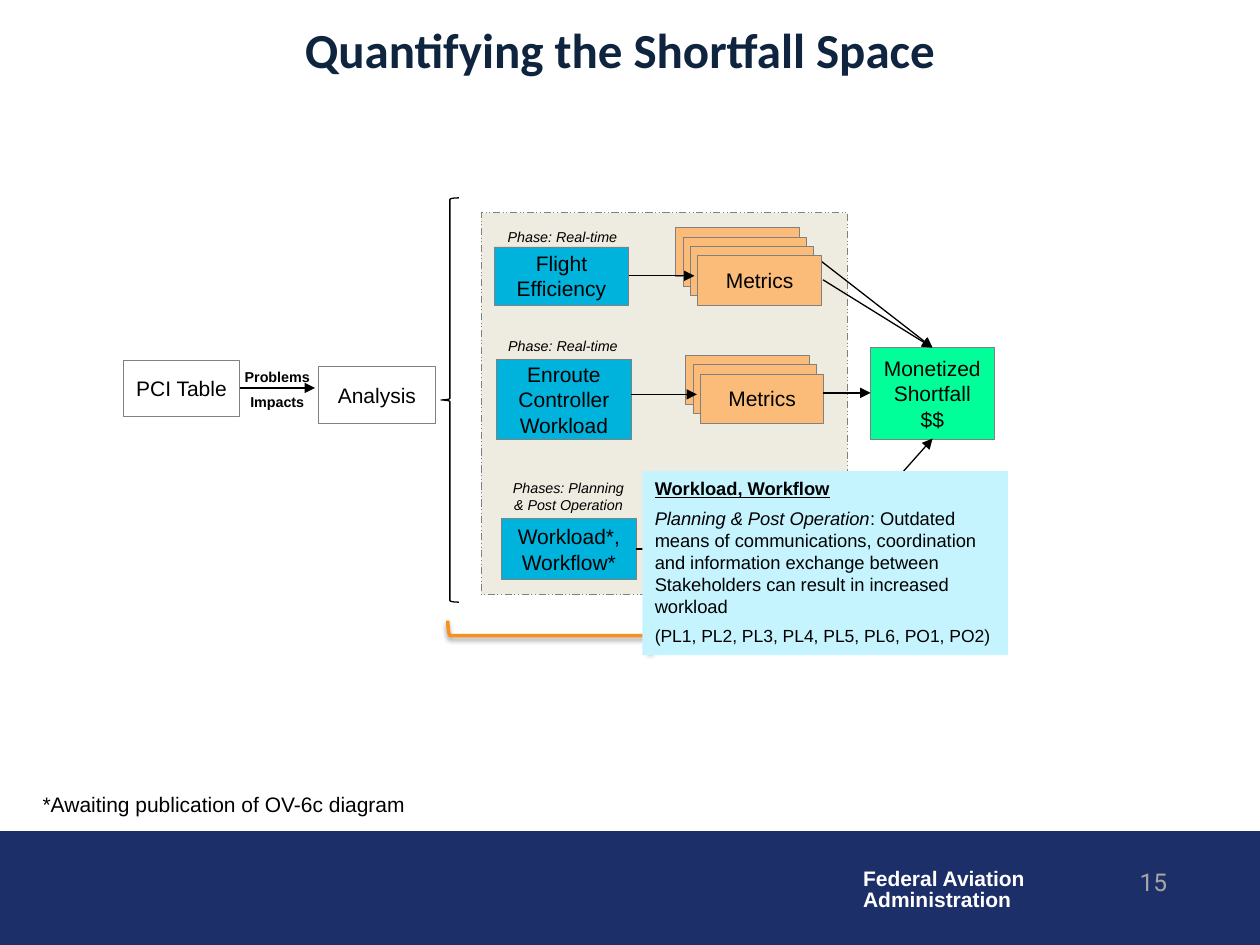
from dataclasses import dataclass, field
from typing import NamedTuple, Optional

from lxml.etree import SubElement
from pptx import Presentation
from pptx.dml.color import RGBColor
from pptx.enum.dml import MSO_LINE
from pptx.enum.shapes import MSO_CONNECTOR, MSO_SHAPE
from pptx.enum.text import MSO_ANCHOR, PP_ALIGN
from pptx.oxml.ns import qn
from pptx.util import Cm, Pt


@dataclass(frozen=True)
class Theme:
    navy: str = "1D2F68"
    title: str = "0F243E"
    black: str = "000000"
    white: str = "FFFFFF"
    number: str = "A6A6A6"
    outline: str = "808080"
    panel: str = "EEECE1"
    card: str = "FABC78"
    task: str = "00B3DC"
    result: str = "00FF99"
    note: str = "C5F4FF"
    accent: str = "F7901E"
    title_size: float = 28
    number_size: float = 14
    body_size: float = 12
    note_size: float = 10.5
    codes_size: float = 10
    label_size: float = 8.2


THEME = Theme()


class Area(NamedTuple):
    left: float
    top: float
    width: float
    height: float


class Run(NamedTuple):
    text: str
    style: dict = {}


@dataclass
class TextStyle:
    size: float = THEME.body_size
    color: str = THEME.black
    font: str = "Arial"
    align: PP_ALIGN = PP_ALIGN.CENTER
    font_values: dict = field(default_factory=dict)
    paragraph_values: dict = field(default_factory=dict)
    frame_values: dict = field(default_factory=dict)


class Box(NamedTuple):
    area: Area
    text: list
    fill: Optional[str]


def set_values(target, values: dict) -> None:
    for name, value in values.items():
        setattr(target, name, value)


def write(shape, paragraphs: list, style: TextStyle) -> None:
    """Fill a shape with text; each paragraph is a string or a list of runs."""
    frame = shape.text_frame
    set_values(frame, {"word_wrap": True, **style.frame_values})
    for index, content in enumerate(paragraphs):
        paragraph = frame.add_paragraph() if index else frame.paragraphs[0]
        set_values(paragraph, {"alignment": style.align, **style.paragraph_values})
        for part in [Run(content)] if isinstance(content, str) else content:
            run = paragraph.add_run()
            run.text = part.text
            set_values(run.font, {"name": style.font, "size": Pt(style.size),
                                  **style.font_values, **part.style})
            run.font.color.rgb = RGBColor.from_string(style.color)


def add_shape(slide, kind: MSO_SHAPE, area: Area, fill: Optional[str] = None,
              line: Optional[str] = THEME.outline, width: float = 0.5):
    shape = slide.shapes.add_shape(kind, *map(Cm, area))
    shape.shadow.inherit = False
    for paint, color in ((shape.fill, fill), (shape.line.fill, line)):
        if color:
            paint.solid()
            paint.fore_color.rgb = RGBColor.from_string(color)
        else:
            paint.background()
    if line:
        shape.line.width = Pt(width)
    return shape


def add_text(slide, area: Area, paragraphs: list, style: TextStyle) -> None:
    write(slide.shapes.add_textbox(*map(Cm, area)), paragraphs, style)


def add_box(slide, box: Box) -> None:
    write(add_shape(slide, MSO_SHAPE.RECTANGLE, box.area, box.fill), box.text, BOX_STYLE)


def add_stack(slide, left: float, top: float, count: int) -> None:
    """Draw overlapping cards; left and top belong to the front card."""
    for behind in reversed(range(count)):
        area = Area(left - 0.15 * behind, top - 0.19 * behind, 2.49, 0.99)
        add_box(slide, Box(area, [] if behind else ["Metrics"], THEME.card))


def add_arrow(slide, *ends: float) -> None:
    connector = slide.shapes.add_connector(MSO_CONNECTOR.STRAIGHT, *map(Cm, ends))
    connector.line.color.rgb = RGBColor.from_string(THEME.black)
    connector.line.width = Pt(0.75)
    properties = connector._element.spPr
    SubElement(properties.find(qn("a:ln")), qn("a:tailEnd"), type="triangle")
    SubElement(properties, qn("a:effectLst"))


def add_soft_shadow(shape) -> None:
    shadow = SubElement(shape._element.spPr.find(qn("a:effectLst")), qn("a:outerShdw"),
                        blurRad=str(Pt(3.1)), dist=str(Pt(1.6)), dir="5400000")
    color = SubElement(shadow, qn("a:srgbClr"), val=THEME.black)
    SubElement(color, qn("a:alpha"), val="38000")


# Text styles
MIDDLE = {"vertical_anchor": MSO_ANCHOR.MIDDLE}
SPACED = {"space_after": Pt(4.5)}
BOX_STYLE = TextStyle(frame_values={**MIDDLE, "margin_left": Cm(0.1), "margin_right": Cm(0.1)})
PHASE_STYLE = TextStyle(THEME.label_size, font_values={"italic": True}, paragraph_values=SPACED)
FLOW_STYLE = TextStyle(THEME.label_size, font_values={"bold": True}, paragraph_values=SPACED)
NOTE_STYLE = TextStyle(THEME.note_size, align=PP_ALIGN.LEFT, paragraph_values=SPACED,
                       frame_values={"vertical_anchor": MSO_ANCHOR.TOP})
TITLE_STYLE = TextStyle(THEME.title_size, THEME.title, "Calibri",
                        font_values={"bold": True}, frame_values=MIDDLE)
AGENCY_STYLE = TextStyle(color=THEME.white, align=PP_ALIGN.LEFT, font_values={"bold": True},
                         paragraph_values={"line_spacing": 0.85},
                         frame_values={"word_wrap": False})
NUMBER_STYLE = TextStyle(THEME.number_size, THEME.number, "Roboto", PP_ALIGN.RIGHT)
FOOTNOTE_STYLE = TextStyle(align=PP_ALIGN.LEFT, frame_values={
    "word_wrap": False, "margin_left": Cm(0.33), "margin_top": Cm(0.18)})

# Diagram content
BOXES = [
    Box(Area(2.49, 7.26, 2.34, 1.14), ["PCI Table"], None),
    Box(Area(6.43, 7.39, 2.34, 1.14), ["Analysis"], None),
    Box(Area(17.55, 7.01, 2.49, 1.85), ["Monetized Shortfall", "$$"], THEME.result),
    Box(Area(10.11, 10.46, 2.72, 1.22), ["Workload*, Workflow*"], THEME.task),
    Box(Area(9.96, 4.98, 2.72, 1.17), ["Flight Efficiency"], THEME.task),
    Box(Area(10.01, 7.24, 2.72, 1.63), ["Enroute Controller Workload"], THEME.task),
]
STACKS = [(14.07, 5.16, 4), (14.12, 7.54, 3)]
ARROWS = [(16.59, 5.64, 18.8, 7.01), (4.83, 7.82, 6.35, 7.82), (12.67, 5.56, 14, 5.56),
          (12.83, 11.07, 14.17, 11.07), (12.73, 7.95, 14.05, 7.95),
          (16.79, 11.1, 18.8, 8.84), (16.59, 7.92, 17.55, 7.92)]
PHASES = [(Area(9.88, 4.47, 2.92, 0.61), "Phase: Real-time"),
          (Area(9.96, 9.53, 3, 0.97), "Phases: Planning & Post Operation"),
          (Area(9.93, 6.68, 2.84, 0.61), "Phase: Real-time")]
NOTE = [
    [Run("Workload, Workflow", {"bold": True, "underline": True})],
    [Run("Planning & Post Operation", {"italic": True}),
     Run(": Outdated means of communications, coordination and information exchange "
         "between Stakeholders can result in increased workload")],
    [Run("(PL1, PL2, PL3, PL4, PL5, PL6, PO1, PO2)", {"size": Pt(THEME.codes_size)})],
]

# Title and footer
presentation = Presentation()
presentation.slide_width, presentation.slide_height = Cm(25.4), Cm(19.05)
slide = presentation.slides.add_slide(presentation.slide_layouts[5])
title = slide.shapes.title
set_values(title, {"left": Cm(0.43), "top": Cm(0), "width": Cm(24.13), "height": Cm(1.96)})
write(title, ["Quantifying the Shortfall Space"], TITLE_STYLE)
add_shape(slide, MSO_SHAPE.RECTANGLE, Area(0, 16.76, 25.4, 2.27), THEME.navy, THEME.navy, 0.75)
add_text(slide, Area(17.15, 17.4, 3.81, 1.12), ["Federal Aviation", "Administration"], AGENCY_STYLE)
add_text(slide, Area(20.78, 17.35, 3, 1.27), ["15"], NUMBER_STYLE)

# Analysis panel, metrics, boxes and arrows
panel = add_shape(slide, MSO_SHAPE.RECTANGLE, Area(9.7, 4.29, 7.39, 7.7), THEME.panel)
panel.line.dash_style = MSO_LINE.DASH_DOT_DOT
add_arrow(slide, 16.15, 4.95, 18.8, 7.01)
for stack in STACKS:
    add_stack(slide, *stack)
for box in BOXES:
    add_box(slide, box)
for arrow in ARROWS:
    add_arrow(slide, *arrow)
add_text(slide, Area(4.09, 7.29, 3, 1.14), ["Problems", "Impacts"], FLOW_STYLE)
for area, label in PHASES:
    add_text(slide, area, [label], PHASE_STYLE)

# Braces, note and footnote
add_shape(slide, MSO_SHAPE.LEFT_BRACE, Area(8.89, 3.99, 0.36, 8.15), None, THEME.black, 0.75)
brace = add_shape(slide, MSO_SHAPE.LEFT_BRACE, Area(12.8, 8.74, 0.61, 8.15), None, THEME.accent, 2)
brace.rotation = 270
add_soft_shadow(brace)
note = add_shape(slide, MSO_SHAPE.RECTANGLE, Area(12.95, 9.5, 7.37, 3.71), THEME.note, None)
write(note, NOTE, NOTE_STYLE)
add_text(slide, Area(0.53, 15.77, 8.31, 0.86),
         ["*Awaiting publication of OV-6c diagram"], FOOTNOTE_STYLE)
presentation.save("out.pptx")
